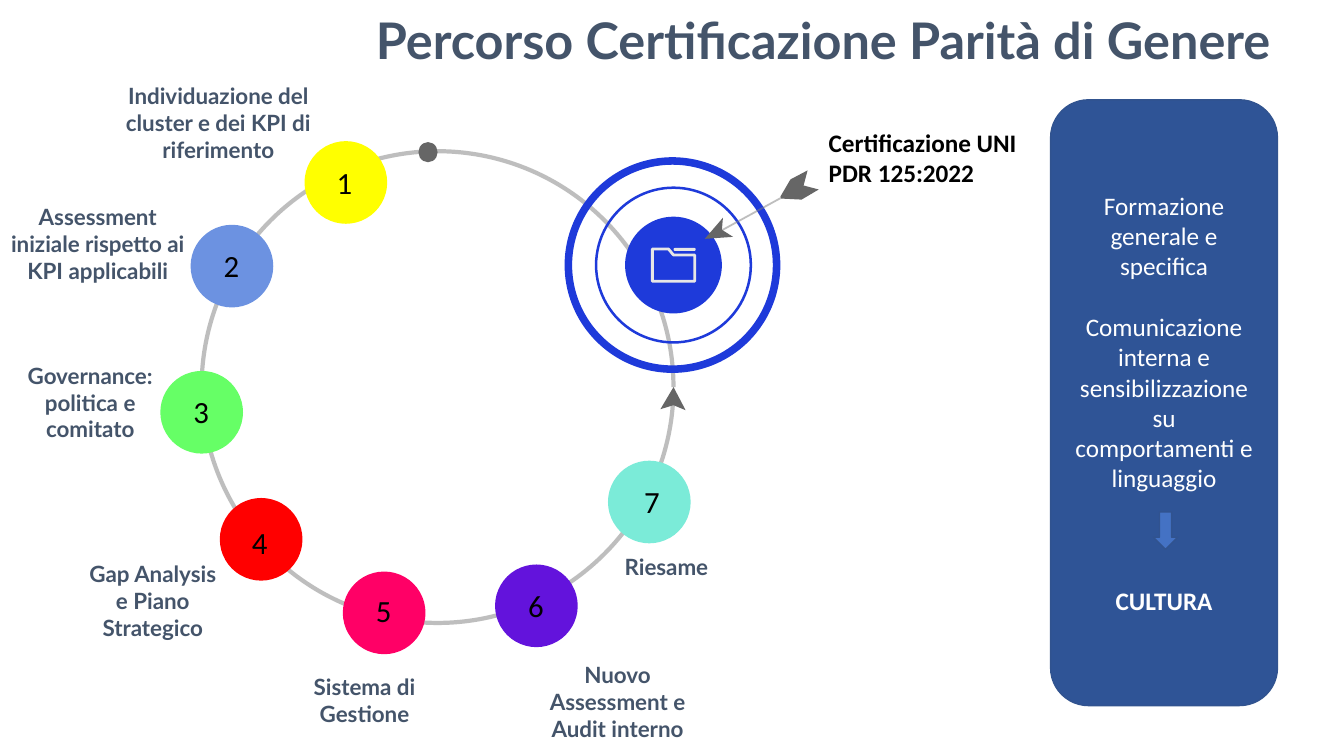
import pptx
import pptx.dml.color
import pptx.enum.shapes
import pptx.enum.text
import pptx.oxml
import pptx.oxml.ns
import pptx.util

Inches = pptx.util.Inches
Preset = pptx.enum.shapes.MSO_SHAPE
Align = pptx.enum.text.PP_ALIGN

COLORS = {
    "slate": "44546A", "black": "000000", "white": "FFFFFF", "track": "7F7F7F",
    "arrow": "666666", "target": "1E3ADA", "icon": "E7E6E6", "panel": "2F5496",
    "panel_line": "31538F", "accent": "4472C4", "yellow": "FFFF00",
    "sky": "6C92E1", "green": "66FF66", "red": "FF0000", "pink": "FF0066",
    "violet": "6313DC", "aqua": "7BEBD8",
}


class SlideBuilder:
    """Draws styled elements on one slide, with lengths in inches."""

    def __init__(self, slide):
        self.shapes = slide.shapes

    def color(self, name):
        return pptx.dml.color.RGBColor.from_string(COLORS[name])

    def paint(self, shape, fill=None, line=None, width=1):
        shape.shadow.inherit = False
        if fill:
            shape.fill.solid()
            shape.fill.fore_color.rgb = self.color(fill)
        else:
            shape.fill.background()
        if line:
            self.stroke(shape.line, line, width)
        else:
            shape.line.fill.background()
        return shape

    def stroke(self, line, color, width):
        line.color.rgb = self.color(color)
        line.width = pptx.util.Pt(width)

    def fade(self, shape, percent):
        tint = shape.line._get_or_add_ln().find(".//" + pptx.oxml.ns.qn("a:srgbClr"))
        tint.append(pptx.oxml.parse_xml(
            f'<a:alpha {pptx.oxml.ns.nsdecls("a")} val="{percent * 1000}"/>'))

    def preset(self, kind, place, fill=None, line=None, width=1, adjustments=()):
        shape = self.shapes.add_shape(kind, *map(Inches, place))
        for index, value in enumerate(adjustments):
            shape.adjustments[index] = value
        return self.paint(shape, fill, line, width)

    def polygon(self, points, fill=None, line=None, width=1):
        corners = [(Inches(x), Inches(y)) for x, y in points]
        builder = self.shapes.build_freeform(*corners[0], scale=1.0)
        builder.add_line_segments(corners[1:], close=True)
        return self.paint(builder.convert_to_shape(), fill, line, width)

    def connector(self, start, end, color, width):
        kind = pptx.enum.shapes.MSO_CONNECTOR.STRAIGHT
        line = self.shapes.add_connector(kind, *map(Inches, start + end))
        self.stroke(line.line, color, width)
        line._element.spPr.append(pptx.oxml.parse_xml(
            f'<a:effectLst {pptx.oxml.ns.nsdecls("a")}/>'))
        return line

    def style(self, para, size, font, color, bold, align):
        para.alignment = align
        for span in para.runs:
            span.font.size = pptx.util.Pt(size)
            span.font.name = font
            span.font.bold = bold
            span.font.color.rgb = self.color(color)

    def text(self, place, words, size=16, font="Lato", color="slate",
             bold=True, align=Align.CENTER):
        box = self.shapes.add_textbox(*map(Inches, place))
        box.text_frame.word_wrap = True
        box.text_frame.text = words
        self.style(box.text_frame.paragraphs[0], size, font, color, bold, align)

    def panel(self, place, entries):
        box = self.preset(Preset.ROUNDED_RECTANGLE, place, "panel", "panel_line",
                          adjustments=[0.167])
        frame = box.text_frame
        frame.word_wrap = True
        frame.vertical_anchor = pptx.enum.text.MSO_ANCHOR.MIDDLE
        frame.text = "\n".join(words for words, gap, bold in entries)
        for para, (words, gap, bold) in zip(frame.paragraphs, entries):
            para.space_before = pptx.util.Pt(gap)
            self.style(para, 18, "Calibri", "white", bold, Align.CENTER)


STEPS = [
    ((3.02, 1.4), "yellow", (3.24, 1.58), (1.04, 0.77, 2.25, 1.18),
     "Individuazione del cluster e dei KPI di riferimento"),
    ((1.89, 2.23), "sky", (2.12, 2.4), (-0.01, 1.97, 1.96, 0.91),
     "Assessment iniziale rispetto ai KPI applicabili"),
    ((1.59, 3.68), "green", (1.82, 3.85), (0.02, 3.54, 1.75, 0.91),
     "Governance: politica e comitato"),
    ((2.18, 4.94), "red", (2.4, 5.15), (0.74, 5.51, 1.55, 0.91),
     "Gap Analysis e Piano Strategico"),
    ((3.4, 5.67), "pink", (3.63, 5.82), (2.89, 6.63, 1.45, 0.64),
     "Sistema di Gestione"),
    ((4.91, 5.6), "violet", (5.14, 5.77), (5.1, 6.51, 2.05, 1.11),
     "Nuovo Assessment e Audit interno"),
    ((6.03, 4.57), "aqua", (6.29, 4.74), (5.95, 5.44, 1.32, 0.37), "Riesame"),
]


def main():
    deck = pptx.Presentation()
    deck.slide_width, deck.slide_height = Inches(13.33), Inches(7.5)
    page = SlideBuilder(deck.slides.add_slide(deck.slide_layouts[6]))

    degree = 0.6
    track = page.preset(Preset.ARC, (2, 1.5, 4.68, 4.68), line="track", width=3,
                        adjustments=[4 * degree, -92 * degree])
    page.fade(track, 50)
    page.polygon([(6.68, 3.84), (6.55, 4.06), (6.68, 4.02), (6.8, 4.07)], "arrow")
    page.preset(Preset.OVAL, (4.15, 1.41, 0.19, 0.2), "arrow")

    page.preset(Preset.DONUT, (5.6, 1.56, 2.14, 2.14), "target", adjustments=[0.035])
    page.preset(Preset.DONUT, (5.9, 1.85, 1.56, 1.56), "target", adjustments=[0.016])
    page.preset(Preset.OVAL, (6.2, 2.15, 0.96, 0.96), "target")
    shaft = page.connector((7.15, 2.29), (7.77, 1.95), "track", 1.28)
    page.fade(shaft, 50)
    page.polygon([(6.99, 2.37), (7.27, 2.35), (7.16, 2.28), (7.17, 2.16)], "arrow")
    page.polygon([(7.74, 1.95), (7.84, 1.78), (8.01, 1.69), (7.97, 1.84),
                  (8.12, 1.88), (7.95, 1.98), (7.75, 1.97)], "arrow")
    page.polygon([(6.47, 2.47), (6.63, 2.47), (6.68, 2.53), (6.89, 2.53),
                  (6.89, 2.79), (6.47, 2.79)], line="icon", width=2)
    page.preset(Preset.ROUNDED_RECTANGLE, (6.68, 2.46, 0.22, 0.03), "icon",
                adjustments=[0.5])

    for number, (corner, color, digit, label, words) in enumerate(STEPS, 1):
        page.preset(Preset.OVAL, corner + (0.82, 0.82), color)
        page.text(digit + (0.32, 0.47), str(number), 22, "Calibri", "black",
                  False, Align.LEFT)
        page.text(label, words)

    page.text((3.63, 0.04, 9.7, 0.71), "Percorso Certificazione Parità di Genere",
              36, align=Align.LEFT)
    page.text((8.12, 1.21, 2.19, 0.71), "Certificazione UNI PDR 125:2022",
              18, "Calibri", "black", align=Align.LEFT)
    page.panel((10.42, 0.99, 2.25, 6.01), [
        ("Formazione generale e specifica", 0, False),
        ("Comunicazione interna e sensibilizzazione", 22, False),
        ("su comportamenti e linguaggio", 0, False),
        ("CULTURA", 66, True),
    ])
    page.preset(Preset.DOWN_ARROW, (11.44, 5.08, 0.24, 0.37), "accent", "panel_line")
    deck.save("out.pptx")


if __name__ == "__main__":
    main()
